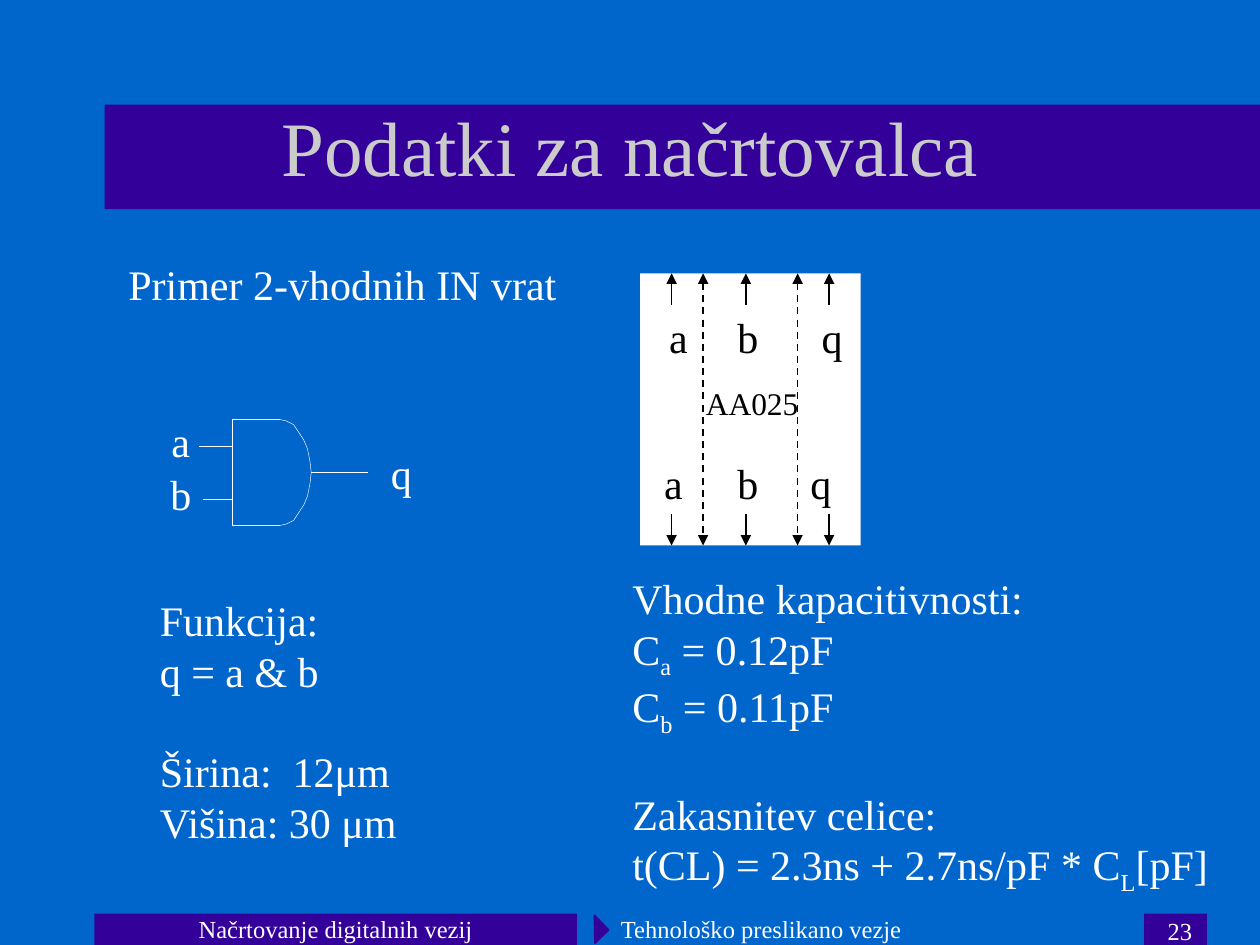
from lxml.etree import SubElement
from pptx import Presentation
from pptx.dml.color import RGBColor
from pptx.enum.dml import MSO_LINE
from pptx.enum.shapes import MSO_CONNECTOR, MSO_SHAPE
from pptx.enum.text import MSO_ANCHOR, PP_ALIGN
from pptx.oxml.ns import qn
from pptx.util import Inches, Pt

BLUE = RGBColor(0x00, 0x66, 0xCC)
PURPLE = RGBColor(0x33, 0x00, 0x99)
WHITE = RGBColor(0xFF, 0xFF, 0xFF)
BLACK = RGBColor(0x00, 0x00, 0x00)
GRAY = RGBColor(0xCB, 0xCB, 0xCB)
FONT = "Times New Roman"


class SlideBuilder:
    def __init__(self, presentation):
        self.slide = presentation.slides.add_slide(presentation.slide_layouts[5])
        self.slide.background.fill.solid()
        self.slide.background.fill.fore_color.rgb = BLUE
        self.shapes = self.slide.shapes

    def start_group(self):
        self.shapes = self.slide.shapes.add_group_shape().shapes

    def end_group(self):
        self.shapes = self.slide.shapes

    def style_run(self, run, size, color):
        run.font.name = FONT
        run.font.size = Pt(size)
        run.font.color.rgb = color

    def title(self, text, left, top, width, height):
        title = self.slide.shapes.title
        title.left, title.top = Inches(left), Inches(top)
        title.width, title.height = Inches(width), Inches(height)
        title.text_frame.text = text
        title.text_frame.vertical_anchor = MSO_ANCHOR.MIDDLE
        paragraph = title.text_frame.paragraphs[0]
        paragraph.alignment = PP_ALIGN.CENTER
        self.style_run(paragraph.runs[0], 44, GRAY)
        title.element.getparent().append(title.element)

    def block(self, left, top, width, height, color, kind=MSO_SHAPE.RECTANGLE):
        shape = self.shapes.add_shape(
            kind, Inches(left), Inches(top), Inches(width), Inches(height))
        shape.shadow.inherit = False
        shape.fill.solid()
        shape.fill.fore_color.rgb = color
        shape.line.fill.background()
        return shape

    def text(self, lines, left, top, width, height, size=24, color=WHITE,
             alignment=PP_ALIGN.LEFT, gap_before=None):
        shape = self.shapes.add_textbox(
            Inches(left), Inches(top), Inches(width), Inches(height))
        frame = shape.text_frame
        frame.word_wrap = alignment != PP_ALIGN.CENTER
        frame.vertical_anchor = MSO_ANCHOR.MIDDLE
        for index, line in enumerate(lines):
            paragraph = frame.add_paragraph() if index else frame.paragraphs[0]
            paragraph.alignment = alignment
            if index == gap_before:
                paragraph.space_before = Pt(size * 1.2)
            for position, part in enumerate(line.split("|")):
                run = paragraph.add_run()
                run.text = part
                self.style_run(run, size, color)
                if position % 2:
                    run.font._element.set("baseline", "-25000")

    def label(self, text, left, top, width=0.37, height=0.5, size=24, color=WHITE):
        self.text([text], left, top, width, height, size, color, PP_ALIGN.CENTER)

    def line(self, start, end, color, weight, ends=(), dashed=False):
        points = [Inches(value) for value in (*start, *end)]
        connector = self.shapes.add_connector(MSO_CONNECTOR.STRAIGHT, *points)
        connector.line.color.rgb = color
        connector.line.width = Pt(weight)
        if dashed:
            connector.line.dash_style = MSO_LINE.DASH
        outline = connector.line._get_or_add_ln()
        for end_name in ends:
            SubElement(outline, qn(f"a:{end_name}"), type="triangle")
        SubElement(connector.element.spPr, qn("a:effectLst"))

    def outline(self, points, color, weight):
        corners = [(Inches(x), Inches(y)) for x, y in points]
        builder = self.shapes.build_freeform(*corners[0])
        builder.add_line_segments(corners[1:], close=False)
        shape = builder.convert_to_shape()
        shape.shadow.inherit = False
        shape.fill.background()
        shape.line.color.rgb = color
        shape.line.width = Pt(weight)


def draw_frame(builder):
    builder.block(9.08, 7.25, 0.5, 0.25, PURPLE)
    builder.block(0.75, 7.25, 3.83, 0.25, PURPLE)
    builder.block(0.83, 0.83, 9.17, 0.83, PURPLE)
    marker = builder.block(4.64, 7.3, 0.16, 0.15, PURPLE, MSO_SHAPE.RIGHT_TRIANGLE)
    marker.rotation = 225.8
    marker.line.color.rgb = PURPLE
    marker.line.width = Pt(1)
    builder.title("Podatki za načrtovalca", 0.75, 0.62, 8.5, 1.08)
    builder.text(["23"], 7.48, 7.22, 2.08, 0.33, 14, alignment=PP_ALIGN.RIGHT)
    builder.label("Načrtovanje digitalnih vezij", 0.75, 7.21, 3.83, 0.33, 14)
    builder.text(["Tehnološko preslikano vezje"], 4.83, 7.21, 3.83, 0.33, 14)


def draw_gate(builder):
    middle = 3.75
    arc = [(2.22, 0.42), (2.27, 0.41), (2.33, 0.38), (2.37, 0.32),
           (2.41, 0.26), (2.44, 0.19), (2.46, 0.09), (2.47, 0)]
    builder.start_group()
    for direction in (-1, 1):
        builder.outline([(x, middle + direction * y) for x, y in arc], WHITE, 0.25)
    builder.outline([(1.84, 3.33), (1.84, 4.17), (2.22, 4.17)], WHITE, 0.25)
    for start, end in [((1.84, 3.33), (2.22, 3.33)), ((1.84, 3.54), (1.58, 3.54)),
                       ((1.61, 3.96), (1.84, 3.96)), ((2.47, middle), (2.92, middle))]:
        builder.line(start, end, WHITE, 0.25)
    builder.end_group()
    for name, left, top in [("a", 1.25, 3.25), ("b", 1.25, 3.67), ("q", 3, 3.5)]:
        builder.label(name, left, top)


def draw_cell(builder):
    top, bottom, arrow = 2.17, 4.33, 0.25
    builder.start_group()
    builder.block(5.08, top, 1.75, bottom - top, WHITE)
    for x in (5.58, 6.33):
        builder.line((x, top), (x, bottom), BLACK, 1, ("headEnd", "tailEnd"), True)
    for x in (5.33, 5.92, 6.58):
        builder.line((x, top + arrow), (x, top), BLACK, 1, ("tailEnd",))
        builder.line((x, bottom - arrow), (x, bottom), BLACK, 1, ("tailEnd",))
    for label_top, lefts in [(2.42, (5.2, 5.75, 6.42)), (3.58, (5.16, 5.75, 6.33))]:
        for name, left in zip("abq", lefts):
            builder.label(name, left, label_top, color=BLACK)
    builder.label("AA025", 5.5, 3, 0.94, 0.4, 18, BLACK)
    builder.end_group()


def main():
    presentation = Presentation()
    presentation.slide_width = Inches(10)
    presentation.slide_height = Inches(7.5)
    builder = SlideBuilder(presentation)
    draw_frame(builder)
    builder.text(["Primer 2-vhodnih IN vrat"], 0.92, 2, 3.8, 0.5)
    draw_gate(builder)
    draw_cell(builder)
    builder.text(["Funkcija:", "q = a & b", "Širina:  12μm", "Višina: 30 μm"],
                 1.17, 4.67, 2.2, 2.1, gap_before=2)
    builder.text(["Vhodne kapacitivnosti:", "C|a| = 0.12pF", "C|b| = 0.11pF",
                  "Zakasnitev celice:", "t(CL) = 2.3ns + 2.7ns/pF * C|L|[pF]"],
                 4.92, 4.58, 4.9, 2.5, gap_before=3)
    presentation.save("out.pptx")


if __name__ == "__main__":
    main()
